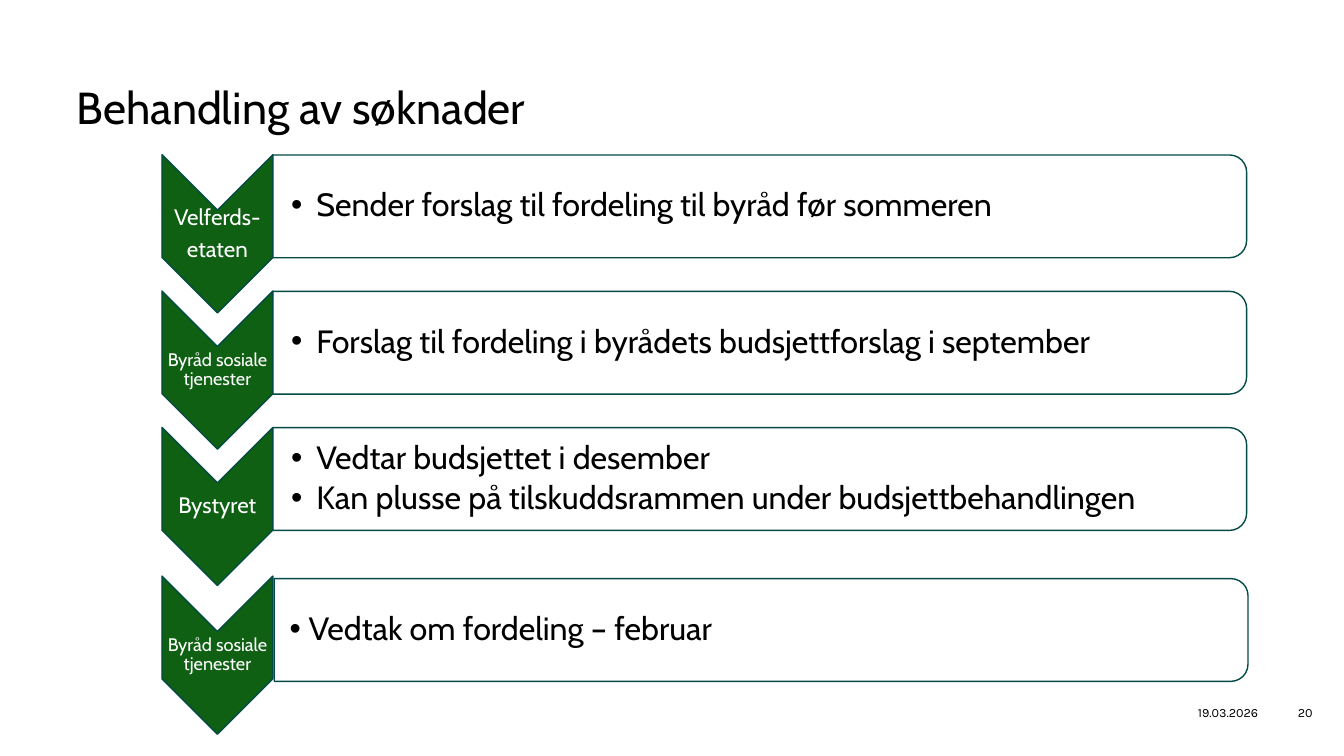
"""Build the slide on how grant applications are processed."""
from lxml.etree import SubElement
from pptx import Presentation
from pptx.dml.color import RGBColor
from pptx.enum.shapes import MSO_SHAPE
from pptx.enum.text import MSO_ANCHOR, PP_ALIGN
from pptx.oxml.ns import qn
from pptx.util import Pt

GREEN = RGBColor(0x0F, 0x60, 0x13)
TEAL = RGBColor(0x03, 0x4B, 0x45)
WHITE = RGBColor(0xFF, 0xFF, 0xFF)
BLACK = RGBColor(0x00, 0x00, 0x00)


def add_rotated(kind, cx, cy, w, h, fill):
    sp = s.shapes.add_shape(kind, Pt(cx - w / 2), Pt(cy - h / 2), Pt(w), Pt(h))
    sp.rotation = 90
    sp.shadow.inherit = False
    sp.fill.solid()
    sp.fill.fore_color.rgb = fill
    sp.line.color.rgb = TEAL
    sp.line.width = Pt(1)
    return sp


def add_text(box, lines, size, color, font="Cabin", align=PP_ALIGN.LEFT,
             inset=(1, 1), after=0, hang=0):
    tb = s.shapes.add_textbox(*[Pt(v) for v in box])
    tf = tb.text_frame
    tf.word_wrap = True
    tf.vertical_anchor = MSO_ANCHOR.MIDDLE
    tf.margin_left, tf.margin_right = Pt(inset[0]), Pt(inset[1])
    tf.margin_top = tf.margin_bottom = Pt(1)
    for i, line in enumerate(lines):
        p = tf.paragraphs[0] if i == 0 else tf.add_paragraph()
        p.alignment = align
        p.line_spacing = 0.9
        p.space_after = Pt(after)
        if hang:
            pPr = p._p.get_or_add_pPr()
            pPr.set("marL", str(Pt(hang)))
            pPr.set("indent", str(-Pt(hang)))
            SubElement(pPr, qn("a:buFont"), typeface="Arial")
            SubElement(pPr, qn("a:buChar"), char="•")
        r = p.add_run()
        r.text = line
        r.font.name = font
        r.font.size = Pt(size)
        r.font.color.rgb = color


prs = Presentation()
prs.slide_width, prs.slide_height = Pt(960), Pt(540)
s = prs.slides.add_slide(prs.slide_layouts[5])

title = s.shapes.title
title.left, title.top, title.width, title.height = Pt(54.7), Pt(56.9), Pt(746), Pt(103)
tf = title.text_frame
tf.margin_left = tf.margin_right = tf.margin_top = tf.margin_bottom = 0
tf.vertical_anchor = MSO_ANCHOR.TOP
p = tf.paragraphs[0]
p.alignment = PP_ALIGN.LEFT
r = p.add_run()
r.text = "Behandling av søknader"
r.font.name = "Cabin"
r.font.size = Pt(32)
r.font.color.rgb = BLACK

steps = [
    (147.4, 0, ["Velferds-", "etaten"], 16, 13, 18,
     ["Sender forslag til fordeling til byråd før sommeren"]),
    (244.8, 0, ["Byråd sosiale tjenester"], 13, 13, 18,
     ["Forslag til fordeling i byrådets budsjettforslag i september"]),
    (342.2, 0, ["Bystyret"], 16, 13, 18,
     ["Vedtar budsjettet i desember",
      "Kan plusse på tilskuddsrammen under budsjettbehandlingen"]),
    (450, 1, ["Byråd sosiale tjenester"], 13, 11, 13.5,
     ["Vedtak om fordeling – februar"]),
]
for cy, shift, actor, size, inset, hang, tasks in steps:
    chevron_y = cy + (18 if shift else 19.6)
    add_rotated(MSO_SHAPE.CHEVRON, 155.3, chevron_y, 113, 79.2, GREEN)
    add_text((115.7, chevron_y - 17, 79.2, 34), actor, size, WHITE,
             align=PP_ALIGN.CENTER, after=0.35 * size)
    panel = add_rotated(MSO_SHAPE.ROUND_2_SAME_RECTANGLE, 542.7 + shift, cy,
                        73.4, 695.5, WHITE)
    color = panel.fill._xPr.find(qn("a:solidFill"))[0]
    SubElement(color, qn("a:alpha"), val="90000")
    add_text((195 + shift, cy - 33, 692, 66), tasks, 23, BLACK,
             inset=(inset, 1), after=3.45, hang=hang)

add_text((800, 495.4, 105.8, 28.8), ["19.03.2026"], 9, BLACK, "Karla",
         PP_ALIGN.RIGHT, (7.2, 7.2))
add_text((905, 495.4, 54.7, 28.8), ["20"], 9, BLACK, "Karla",
         PP_ALIGN.CENTER, (7.2, 7.2))

prs.save("out.pptx")
